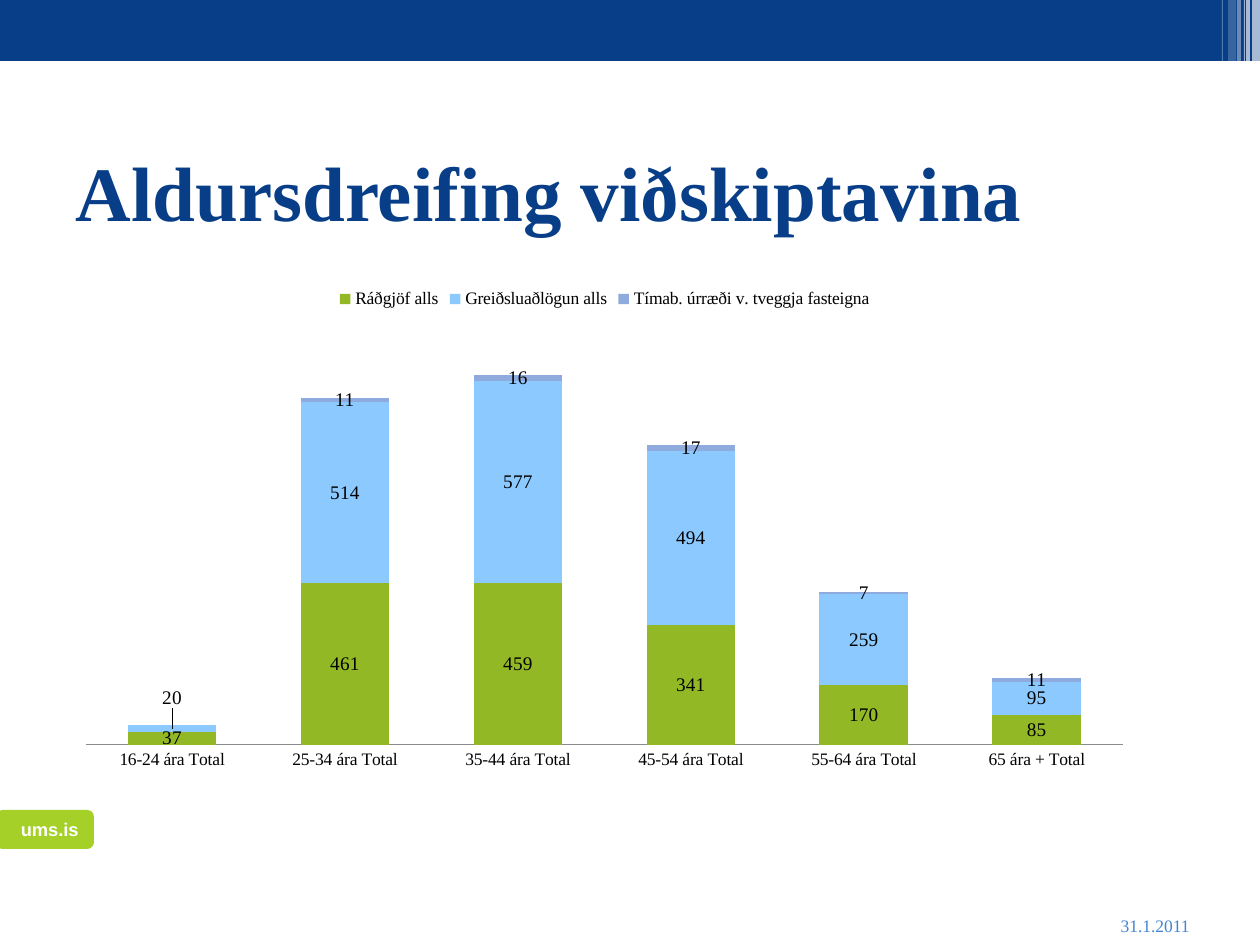
from lxml.etree import SubElement, fromstring
from pptx import Presentation
from pptx.chart.data import CategoryChartData
from pptx.dml.color import RGBColor
from pptx.enum.chart import XL_CHART_TYPE, XL_LEGEND_POSITION, XL_TICK_MARK
from pptx.enum.shapes import MSO_SHAPE
from pptx.enum.text import MSO_ANCHOR, PP_ALIGN
from pptx.oxml.ns import nsdecls, qn
from pptx.util import Emu, Pt

NAVY, LIME, WHITE, BLACK = "073E87", "A5D028", "FFFFFF", "000000"
SERIF = "Times New Roman"
AGES = ["16-24 ára Total", "25-34 ára Total", "35-44 ára Total",
        "45-54 ára Total", "55-64 ára Total", "65 ára + Total"]
ROWS = [
    ("Ráðgjöf alls", "92B925", (37, 461, 459, 341, 170, 85)),
    ("Greiðsluaðlögun alls", "8BC9FF", (20, 514, 577, 494, 259, 95)),
    ("Tímab. úrræði v. tveggja fasteigna", "8FAADC", (None, 11, 16, 17, 7, 11)),
]
BARS = [(1252, 8, 65), (1237, 4, 40), (1244, 1, 60), (1246, 4, 65),
        (1222, 1, 30), (1228, 8, 20)]


def px(n):
    return Emu(round(n * 914400 / 126))


def tint(code):
    return RGBColor.from_string(code)


def place(**parts):
    """Return a manual chart layout."""
    tags = "".join(f'<c:{key} val="{val}"/>' for key, val in parts.items())
    return fromstring(f'<c:layout {nsdecls("c")}><c:manualLayout>{tags}'
                      '</c:manualLayout></c:layout>')


class Deck:
    """Hold the style and the current slide."""

    def __init__(self):
        self.show = Presentation()
        self.show.slide_width, self.show.slide_height = px(1260), px(945)
        self.slide = self.show.slides.add_slide(self.show.slide_layouts[5])

    def label(self, frame, text, size, color, face=SERIF, bold=False,
              align=PP_ALIGN.LEFT, anchor=MSO_ANCHOR.MIDDLE):
        frame.text = text
        frame.word_wrap = True
        frame.vertical_anchor = anchor
        line = frame.paragraphs[0]
        line.alignment = align
        self.style(line.runs[0].font, size, color, face, bold)

    def style(self, font, size, color=BLACK, face=SERIF, bold=False):
        font.size, font.name, font.bold = Pt(size), face, bold
        font.color.rgb = tint(color)

    def title(self, text, *box):
        head = self.slide.shapes.title
        head.left, head.top, head.width, head.height = map(px, box)
        self.label(head.text_frame, text, 44, NAVY, bold=True)

    def block(self, color, *box, kind=MSO_SHAPE.RECTANGLE, alpha=100):
        shape = self.slide.shapes.add_shape(kind, *map(px, box))
        shape.shadow.inherit = False
        shape.fill.solid()
        shape.fill.fore_color.rgb = tint(color)
        shape.line.fill.background()
        if alpha < 100:
            fill = shape._element.spPr.find(qn("a:solidFill"))
            SubElement(fill[0], qn("a:alpha"), val=str(alpha * 1000))
        return shape

    def badge(self, text, *box):
        shape = self.block(LIME, *box, kind=MSO_SHAPE.ROUNDED_RECTANGLE)
        self.label(shape.text_frame, text, 10.5, WHITE, "Arial", True,
                   PP_ALIGN.CENTER)
        shape.text_frame.margin_left = px(22)

    def note(self, text, *box):
        shape = self.slide.shapes.add_textbox(*map(px, box))
        self.label(shape.text_frame, text, 10, "4584D3",
                   align=PP_ALIGN.RIGHT, anchor=MSO_ANCHOR.BOTTOM)

    def chart(self, cats, rows, *box):
        data = CategoryChartData()
        data.categories = cats
        for name, _, vals in rows:
            data.add_series(name, vals)
        chart = self.slide.shapes.add_chart(
            XL_CHART_TYPE.COLUMN_STACKED, *map(px, box), data).chart
        self.style(chart.font, 10)
        chart.has_title = False
        chart.has_legend = True
        chart.legend.position = XL_LEGEND_POSITION.TOP
        chart.legend.include_in_layout = False
        self.axes(chart)
        plot = chart.plots[0]
        plot.gap_width, plot.overlap = 95, 100
        plot.vary_by_categories = False
        for part, (_, color, _) in zip(plot.series, rows):
            part.format.fill.solid()
            part.format.fill.fore_color.rgb = tint(color)
            part.data_labels.show_value = True
            self.style(part.data_labels.font, 11)
        self.lift(plot.series[1], 0)
        area = chart.element.find(f'.//{qn("c:plotArea")}')
        for old in area.findall(qn("c:layout")):
            area.remove(old)
        area.insert(0, place(layoutTarget="inner", xMode="edge", yMode="edge",
                             x=0.02, y=0.095, w=0.96, h=0.832))

    def axes(self, chart):
        base, scale = chart.category_axis, chart.value_axis
        base.major_tick_mark = XL_TICK_MARK.NONE
        base.format.line.color.rgb = tint("8B8B8B")
        base.format.line.width = Pt(0.75)
        scale.minimum_scale, scale.maximum_scale = 0, 1200
        scale.has_major_gridlines = False
        scale.visible = False

    def lift(self, part, spot):
        """Raise one label above its bar."""
        self.style(part.points[spot].data_label.font, 11)
        label = part._element.find(f'.//{qn("c:dLbl")}')
        label.insert(1, place(x=0, y=-0.06))


def main():
    deck = Deck()
    deck.badge("ums.is", -4, 810, 98, 39)
    deck.block(NAVY, -4, -4, 1264, 65)
    for left, width, alpha in BARS:
        deck.block(WHITE, left, 0, width, 84, alpha=alpha)
    deck.title("Aldursdreifing viðskiptavina", 63, 117, 1134, 147)
    deck.note("31.1.2011", 1070, 903, 132, 39)
    deck.chart(AGES, ROWS, 64, 275, 1081, 507)
    deck.show.save("out.pptx")


if __name__ == "__main__":
    main()
